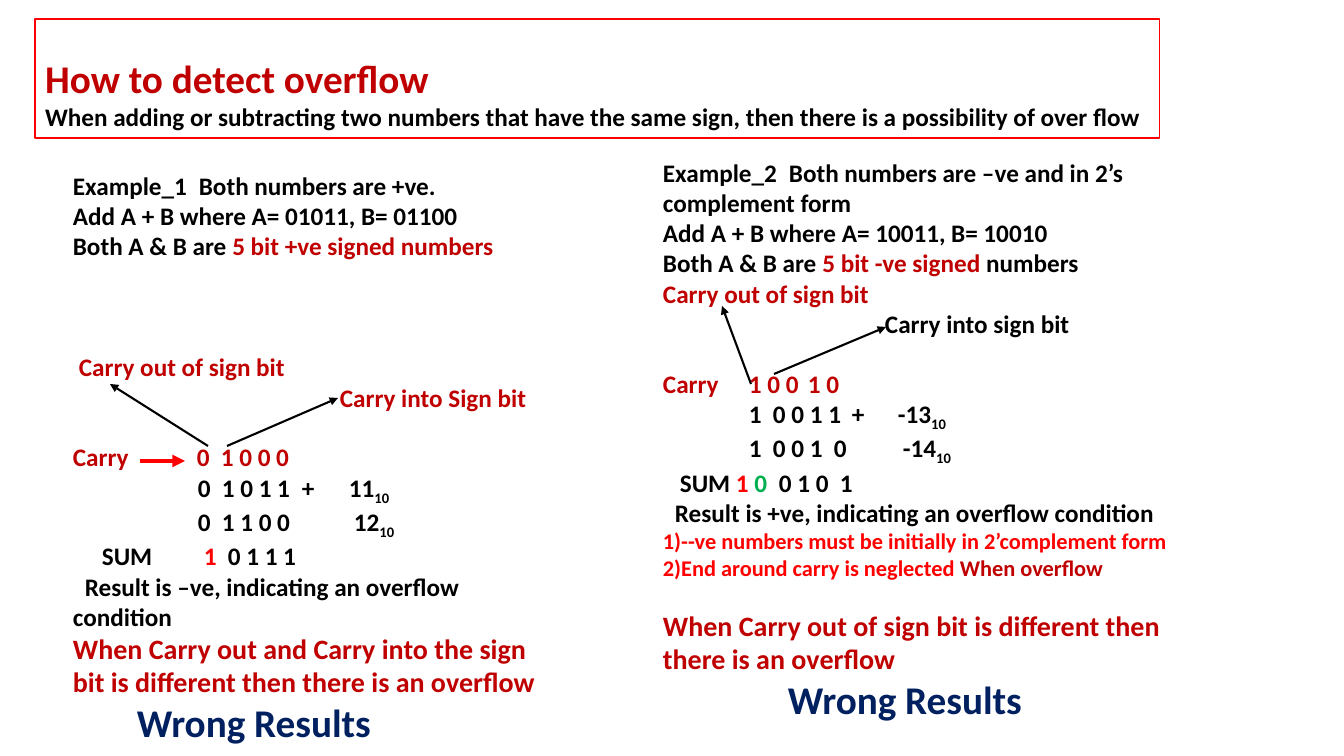
from pptx import Presentation
from pptx.dml.color import RGBColor
from pptx.enum.shapes import MSO_CONNECTOR
from pptx.enum.text import MSO_ANCHOR, MSO_AUTO_SIZE, PP_ALIGN
from pptx.oxml.ns import qn
from pptx.util import Emu, Pt
from lxml.etree import SubElement

PX = 914400 / 100.8
FONT = "Calibri"
BLACK = RGBColor(0, 0, 0)
DARK = RGBColor(0xC0, 0, 0)
RED = RGBColor(0xFF, 0, 0)
GREEN = RGBColor(0, 0xB0, 0x50)
NAVY = RGBColor(0, 0x20, 0x60)
SUB = "subscript"

# Each line: runs, size, colour, points before, first indent px, tab stops px.
# A run is a string, or a string with its own colour or SUB.
TITLE = [
    (["How to detect overflow"], 28, DARK, 0, 0, ()),
    (["When adding or subtracting two numbers that have the same sign, "
      "then there is a possibility of over flow"], 18, BLACK, 0, 0, ()),
]
FIRST = [
    (["Example_1\tBoth numbers are +ve."], 18, BLACK, 0, 0, (126,)),
    (["Add A + B where A= 01011, B= 01100"], 18, BLACK, 0, 0, ()),
    (["Both A & B are ", ("5 bit +ve signed numbers", DARK)],
     18, BLACK, 0, 0, ()),
    (["Carry out of sign bit"], 18, DARK, 65, 6, ()),
    (["Carry into Sign bit"], 18, DARK, 0, 267, ()),
    (["Carry\t0\t1 0 0 0"], 18, DARK, 21, 0, (124, 148)),
    (["\t0\t1 0 1 1\t+\t11", ("10", SUB)],
     18, BLACK, 0, 0, (125, 149, 229, 276)),
    (["\t0\t1 1 0 0\t12", ("10", SUB)], 18, BLACK, 0, 0, (125, 149, 281)),
    (["\tSUM\t", ("1", RED), "\t0 1 1 1"], 18, BLACK, 0, 0, (29, 131, 155)),
    (["Result is –ve, indicating an overflow condition"],
     18, BLACK, 0, 12, ()),
    (["When Carry out and Carry into the sign bit is different "
      "then there is an overflow"], 20, DARK, 0, 0, ()),
    (["Wrong Results"], 28, NAVY, 0, 64, ()),
]
SECOND = [
    (["Example_2\tBoth numbers are –ve and in 2’s"],
     18, BLACK, 0, 0, (126,)),
    (["complement form"], 18, BLACK, 0, 0, ()),
    (["Add A + B where A= 10011, B= 10010"], 18, BLACK, 0, 0, ()),
    (["Both A & B are ", ("5 bit -ve signed", DARK), " numbers"],
     18, BLACK, 0, 0, ()),
    (["Carry out of sign bit"], 18, DARK, 0, 0, ()),
    (["Carry into sign bit"], 18, BLACK, 0, 222, ()),
    (["Carry\t1 0 0\t1 0"], 18, DARK, 21, 0, (86, 145)),
    (["\t1\t0 0 1 1\t+\t-13", ("10", SUB)],
     18, BLACK, 0, 0, (86, 110, 189, 235)),
    (["\t1\t0 0 1\t0\t-14", ("10", SUB)],
     18, BLACK, 0, 0, (86, 110, 171, 240)),
    (["\tSUM ", ("1 ", RED), ("0", GREEN), "\t0 1 0\t1"],
     18, BLACK, 0, 0, (17, 116, 177)),
    (["Result is +ve, indicating an overflow condition"],
     18, BLACK, 0, 12, ()),
    (["1)--ve numbers must be initially in 2’complement form"],
     16, RED, 0, 0, ()),
    (["2)End around carry is neglected ", ("When overflow", DARK)],
     16, RED, 0, 0, ()),
    (["When Carry out of sign bit is different then there is an overflow"],
     20, DARK, 19.5, 0, ()),
    (["Wrong Results"], 28, NAVY, 0, 125, ()),
]
# Left, top, width, height, top inset, lines
HEAD = (35, 19, 1125, 119, 35, TITLE)
SUMS = [
    (63, 135, 494, 615, 35, FIRST),
    (653, 152, 548, 598, 5, SECOND),
]
# Start, end, colour, width in points
ARROWS = [
    ((227, 446), (338, 398), BLACK, 1.5),
    ((208, 446), (110, 384), BLACK, 1.5),
    ((140, 461), (185, 461), RED, 3),
    ((751, 384), (722, 306), BLACK, 1.5),
    ((774, 374), (886, 327), BLACK, 1.5),
]


def px(n):
    return Emu(round(n * PX))


def set_tabs(para, indent, stops):
    """Indent the first line, or add left tab stops."""
    props = para._p.get_or_add_pPr()
    if indent:
        props.set("indent", str(px(indent)))
    if stops:
        tabs = SubElement(props, qn("a:tabLst"))
        for stop in stops:
            SubElement(tabs, qn("a:tab"), pos=str(px(stop)), algn="l")


def add_line(para, line):
    runs, size, colour, before, indent, stops = line
    para.alignment = PP_ALIGN.LEFT
    para.space_before = Pt(before)
    set_tabs(para, indent, stops)
    font = para.font
    font.name, font.size, font.bold = FONT, Pt(size), True
    font.color.rgb = colour
    for item in runs:
        text, style = (item, None) if isinstance(item, str) else item
        run = para.add_run()
        run.text = text
        if style == SUB:
            run._r.get_or_add_rPr().set("baseline", "-25000")
        elif style:
            run.font.color.rgb = style


def fill_box(shape, box):
    left, top, width, height, inset, lines = box
    shape.left, shape.top = px(left), px(top)
    shape.width, shape.height = px(width), px(height)
    frame = shape.text_frame
    frame.word_wrap = True
    frame.auto_size = MSO_AUTO_SIZE.NONE
    frame.vertical_anchor = MSO_ANCHOR.TOP
    frame.margin_top = px(inset)
    for i, line in enumerate(lines):
        para = frame.add_paragraph() if i else frame.paragraphs[0]
        add_line(para, line)


def add_arrow(slide, start, end, colour, width):
    arrow = slide.shapes.add_connector(
        MSO_CONNECTOR.STRAIGHT, *map(px, start + end))
    arrow.line.color.rgb = colour
    arrow.line.width = Pt(width)
    SubElement(arrow.line._get_or_add_ln(), qn("a:tailEnd"), type="triangle")
    SubElement(arrow._element.spPr, qn("a:effectLst"))


def main():
    deck = Presentation()
    deck.slide_width, deck.slide_height = px(1344), px(756)
    slide = deck.slides.add_slide(deck.slide_layouts[5])
    title = slide.shapes.title
    fill_box(title, HEAD)
    title.line.color.rgb = RED
    title.line.width = Pt(0.75)
    for box in SUMS:
        fill_box(slide.shapes.add_textbox(0, 0, 0, 0), box)
    for arrow in ARROWS:
        add_arrow(slide, *arrow)
    deck.save("out.pptx")


if __name__ == "__main__":
    main()
